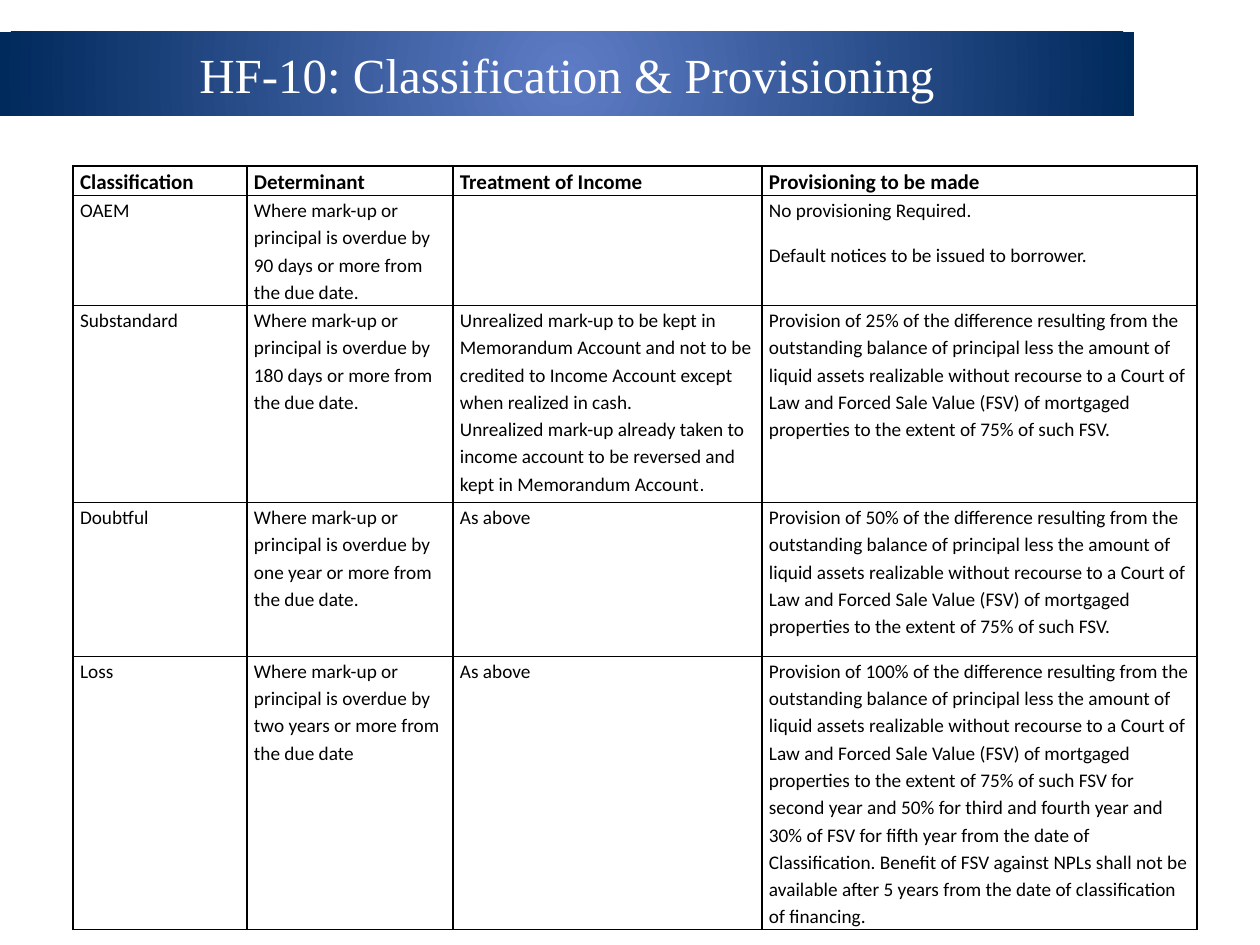
from dataclasses import dataclass

from lxml.etree import SubElement
from pptx import Presentation
from pptx.dml.color import RGBColor
from pptx.enum.text import MSO_ANCHOR, MSO_AUTO_SIZE, PP_ALIGN
from pptx.oxml.ns import qn
from pptx.util import Emu, Pt


@dataclass(frozen=True)
class Theme:
    heading_font: str = "Times New Roman"
    body_font: str = "Calibri"
    stop_font: str = "Arial"
    heading_size: int = 28
    header_size: int = 12
    body_size: int = 11
    border_width: int = 1
    banner_center: str = "5E7CC5"
    banner_edge: str = "00295C"
    ink: str = "000000"
    light: str = "FFFFFF"


THEME = Theme()
EMU_PER_PX = 914400 / 126


def overdue(period, end="."):
    return [f"Where mark-up or principal is overdue by {period} or more from the due date{end}"]


def provision(percent, end="."):
    return [
        f"Provision of {percent}% of the difference resulting from the outstanding balance of "
        "principal less the amount of liquid assets realizable without recourse to a Court of Law "
        "and Forced Sale Value (FSV) of mortgaged properties to the extent of 75% of such FSV" + end
    ]


HEADING = "HF-10: Classification & Provisioning"
HEADERS = [["Classification"], ["Determinant"], ["Treatment of Income"], ["Provisioning to be made"]]
CLASSES = [
    [
        ["OAEM"],
        overdue("90 days"),
        [],
        ["No provisioning Required.", "Default notices to be issued to borrower."],
    ],
    [
        ["Substandard"],
        overdue("180 days"),
        [
            "Unrealized mark-up to be kept in Memorandum Account and not to be credited to "
            "Income Account except when realized in cash.",
            (
                "Unrealized mark-up already taken to income account to be reversed and kept in "
                "Memorandum Account",
                ".",
            ),
        ],
        provision(25),
    ],
    [["Doubtful"], overdue("one year"), ["As above"], provision(50)],
    [
        ["Loss"],
        overdue("two years", end=""),
        ["As above"],
        provision(
            100,
            " for second year and 50% for third and fourth year and 30% of FSV for fifth year from "
            "the date of Classification. Benefit of FSV against NPLs shall not be available after "
            "5 years from the date of classification of financing.",
        ),
    ],
]
TIGHT_CELLS = {(1, 0), (1, 1), (2, 2), (3, 1), (3, 3), (4, 3)}

SLIDE_SIZE = (1260, 945)
BANNER = (0, 32, 1134, 84)
TABLE_ORIGIN = (73, 166)
COLUMN_WIDTHS = (174, 206, 309, 435)
ROW_HEIGHTS = (23, 110, 197, 154, 262)
CELL_INSET = 7


def px(length):
    return Emu(round(length * EMU_PER_PX))


def write(frame, paragraphs, *, font, size, color, bold=False, align=None, line=None, after=None):
    for index, content in enumerate(paragraphs):
        paragraph = frame.paragraphs[0] if index == 0 else frame.add_paragraph()
        paragraph.alignment = align
        paragraph.line_spacing = line
        paragraph.space_after = after
        pieces = content if isinstance(content, tuple) else (content,)
        for piece in pieces:
            run = paragraph.add_run()
            run.text = piece
            run.font.name = THEME.stop_font if piece == "." else font
            run.font.size = Pt(size)
            run.font.bold = bold
            run.font.color.rgb = RGBColor.from_string(color)


def fill_radial(shape, center, edge):
    shape.fill.gradient()
    for stop, color in zip(shape.fill.gradient_stops, (center, edge)):
        stop.color.rgb = RGBColor.from_string(color)
    gradient = shape.element.spPr.find(qn("a:gradFill"))
    gradient.remove(gradient.find(qn("a:lin")))
    radial = SubElement(gradient, qn("a:path"), path="circle")
    SubElement(radial, qn("a:fillToRect"), l="50000", t="50000", r="50000", b="50000")


def draw_borders(cell):
    properties = cell._tc.get_or_add_tcPr()
    for index, side in enumerate(("a:lnL", "a:lnR", "a:lnT", "a:lnB")):
        border = properties.makeelement(qn(side), {"w": str(Pt(THEME.border_width))})
        properties.insert(index, border)
        SubElement(SubElement(border, qn("a:solidFill")), qn("a:srgbClr"), val=THEME.ink)


def add_banner(slide):
    banner = slide.shapes.title
    banner.left, banner.top, banner.width, banner.height = map(px, BANNER)
    fill_radial(banner, THEME.banner_center, THEME.banner_edge)
    frame = banner.text_frame
    frame.word_wrap = True
    frame.auto_size = MSO_AUTO_SIZE.NONE
    frame.vertical_anchor = MSO_ANCHOR.MIDDLE
    write(frame, [HEADING], font=THEME.heading_font, size=THEME.heading_size,
          color=THEME.light, align=PP_ALIGN.CENTER)


def add_classification_table(slide):
    rows = [HEADERS, *CLASSES]
    table = slide.shapes.add_table(
        len(rows), len(HEADERS), *map(px, TABLE_ORIGIN), px(sum(COLUMN_WIDTHS)), px(sum(ROW_HEIGHTS))
    ).table
    table.first_row = table.horz_banding = False
    for column, width in zip(table.columns, COLUMN_WIDTHS):
        column.width = px(width)
    for row, height in zip(table.rows, ROW_HEIGHTS):
        row.height = px(height)
    for r, row in enumerate(rows):
        header = r == 0
        for c, paragraphs in enumerate(row):
            cell = table.cell(r, c)
            cell.fill.background()
            cell.margin_left = cell.margin_right = px(CELL_INSET)
            cell.margin_top = cell.margin_bottom = 0
            draw_borders(cell)
            tight = header or (r, c) in TIGHT_CELLS
            write(cell.text_frame, paragraphs, font=THEME.body_font,
                  size=THEME.header_size if header else THEME.body_size,
                  color=THEME.ink, bold=header, line=1.15, after=Pt(0 if tight else 10))


def main():
    deck = Presentation()
    deck.slide_width, deck.slide_height = map(px, SLIDE_SIZE)
    slide = deck.slides.add_slide(deck.slide_layouts[5])
    add_banner(slide)
    add_classification_table(slide)
    deck.save("out.pptx")


if __name__ == "__main__":
    main()
